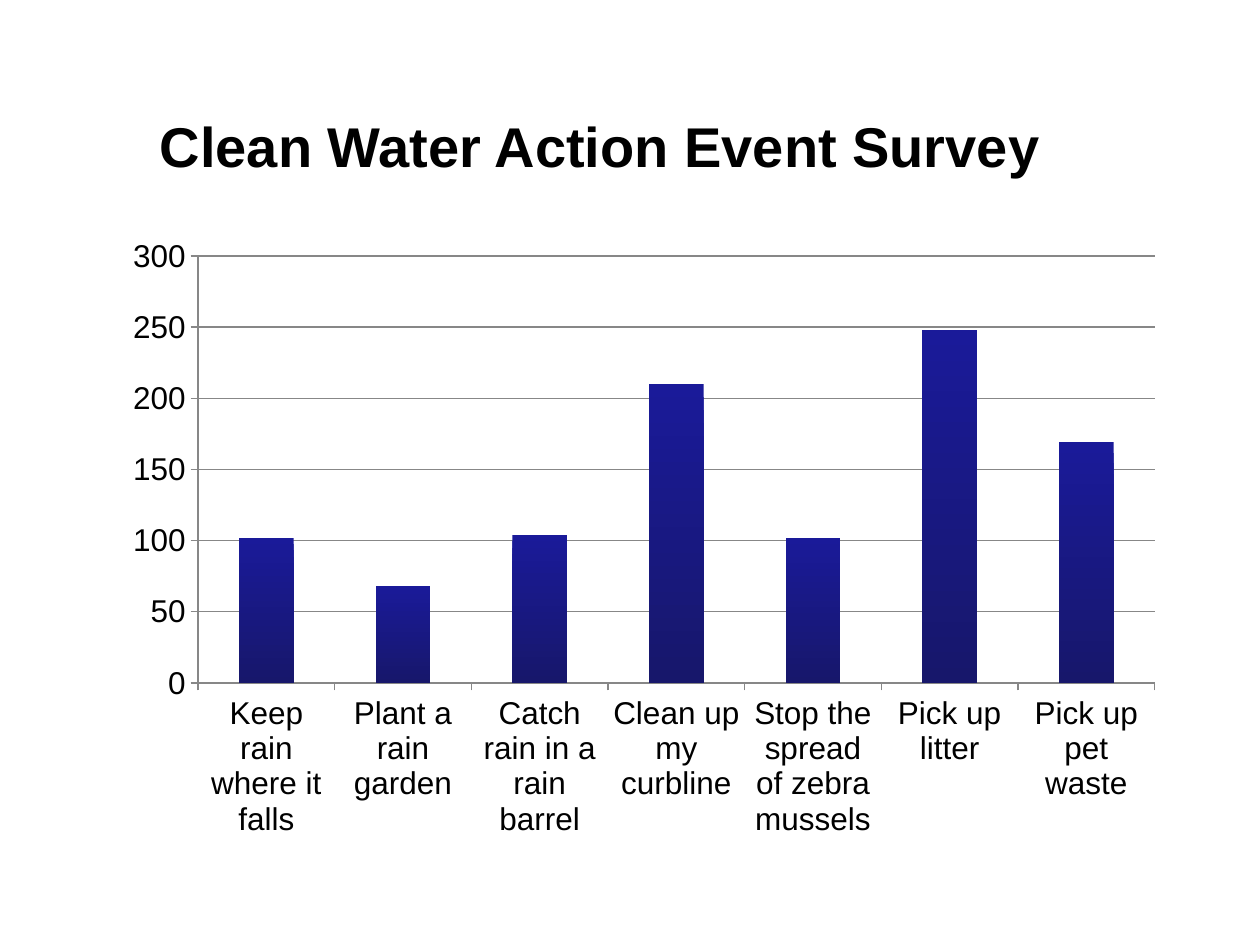
import dataclasses

import lxml.etree
import pptx
import pptx.chart.data
import pptx.dml.color
import pptx.enum.chart
import pptx.oxml
import pptx.oxml.ns
import pptx.util


@dataclasses.dataclass(frozen=True)
class Theme:
    font: str = "Arial"
    title_size: int = 32
    chart_size: int = 18
    ink: str = "000000"
    rule: str = "878787"
    bar_top: str = "1A1A99"
    bar_bottom: str = "17176B"


class SurveySlide:
    """Holds the theme and the current slide; places are shares of its size."""

    def __init__(self, deck, theme):
        self.deck = deck
        self.theme = theme
        self.page = deck.slides.add_slide(deck.slide_layouts[6])

    def place(self, left, top, width, height):
        across, down = self.deck.slide_width, self.deck.slide_height
        return [int(share * size) for share, size in
                zip((left, top, width, height), (across, down, across, down))]

    def color(self, name):
        return pptx.dml.color.RGBColor.from_string(getattr(self.theme, name))

    def style_font(self, font, size, bold=False):
        font.name = self.theme.font
        font.size = pptx.util.Pt(size)
        font.bold = bold
        font.color.rgb = self.color("ink")

    def title(self, text, *area):
        box = self.page.shapes.add_textbox(*self.place(*area))
        box.text_frame.word_wrap = True
        para = box.text_frame.paragraphs[0]
        para.text = text
        self.style_font(para.font, self.theme.title_size, bold=True)

    def column_chart(self, name, answers, plot_area, *area):
        data = pptx.chart.data.CategoryChartData()
        data.categories = list(answers)
        data.add_series(name, list(answers.values()))
        kind = pptx.enum.chart.XL_CHART_TYPE.COLUMN_CLUSTERED
        chart = self.page.shapes.add_chart(kind, *self.place(*area), data).chart
        chart.has_legend = False
        chart.has_title = False
        self.style_font(chart.font, self.theme.chart_size)

        # Columns
        plot = chart.plots[0]
        plot.gap_width = 150
        plot.vary_by_categories = False
        fill = plot.series[0].format.fill
        fill.gradient()
        fill.gradient_angle = 270
        for stop, shade in zip(fill.gradient_stops, ("bar_top", "bar_bottom")):
            stop.color.rgb = self.color(shade)

        # Axes and gridlines
        values = chart.value_axis
        values.minimum_scale, values.maximum_scale = 0, 300
        values.major_unit = 50
        values.has_major_gridlines = True
        for axis in (values, chart.category_axis):
            axis.major_tick_mark = pptx.enum.chart.XL_TICK_MARK.OUTSIDE
        for part in (values, chart.category_axis, values.major_gridlines):
            part.format.line.color.rgb = self.color("rule")
            part.format.line.width = pptx.util.Pt(0.75)
        self.fix_plot_area(chart, plot_area)

    def fix_plot_area(self, chart, plot_area):
        qn = pptx.oxml.ns.qn
        area = chart.plots[0]._element.getparent()
        for old in area.findall(qn("c:layout")):
            area.remove(old)
        layout = pptx.oxml.parse_xml(
            f"<c:layout {pptx.oxml.ns.nsdecls('c')}><c:manualLayout/></c:layout>")
        settings = [("layoutTarget", "inner"), ("xMode", "edge"), ("yMode", "edge")]
        settings += zip("xywh", plot_area)
        for tag, value in settings:
            lxml.etree.SubElement(layout[0], qn(f"c:{tag}")).set("val", str(value))
        area.insert(0, layout)


def main():
    deck = pptx.Presentation()
    deck.slide_width = pptx.util.Inches(10)
    deck.slide_height = pptx.util.Inches(7.5)
    survey = SurveySlide(deck, Theme())

    # Survey answers
    answers = {
        "Keep rain where it falls": 102,
        "Plant a rain garden": 68,
        "Catch rain in a rain barrel": 104,
        "Clean up my curbline": 210,
        "Stop the spread of zebra mussels": 102,
        "Pick up litter": 248,
        "Pick up pet waste": 169,
    }
    survey.column_chart("Series 1", answers, (0.087, 0.055, 0.89, 0.662),
                        0.083, 0.2333, 0.853, 0.6827)

    # Heading
    survey.title("Clean Water Action Event Survey", 0.117, 0.111, 0.833, 0.085)

    deck.save("out.pptx")


if __name__ == "__main__":
    main()
